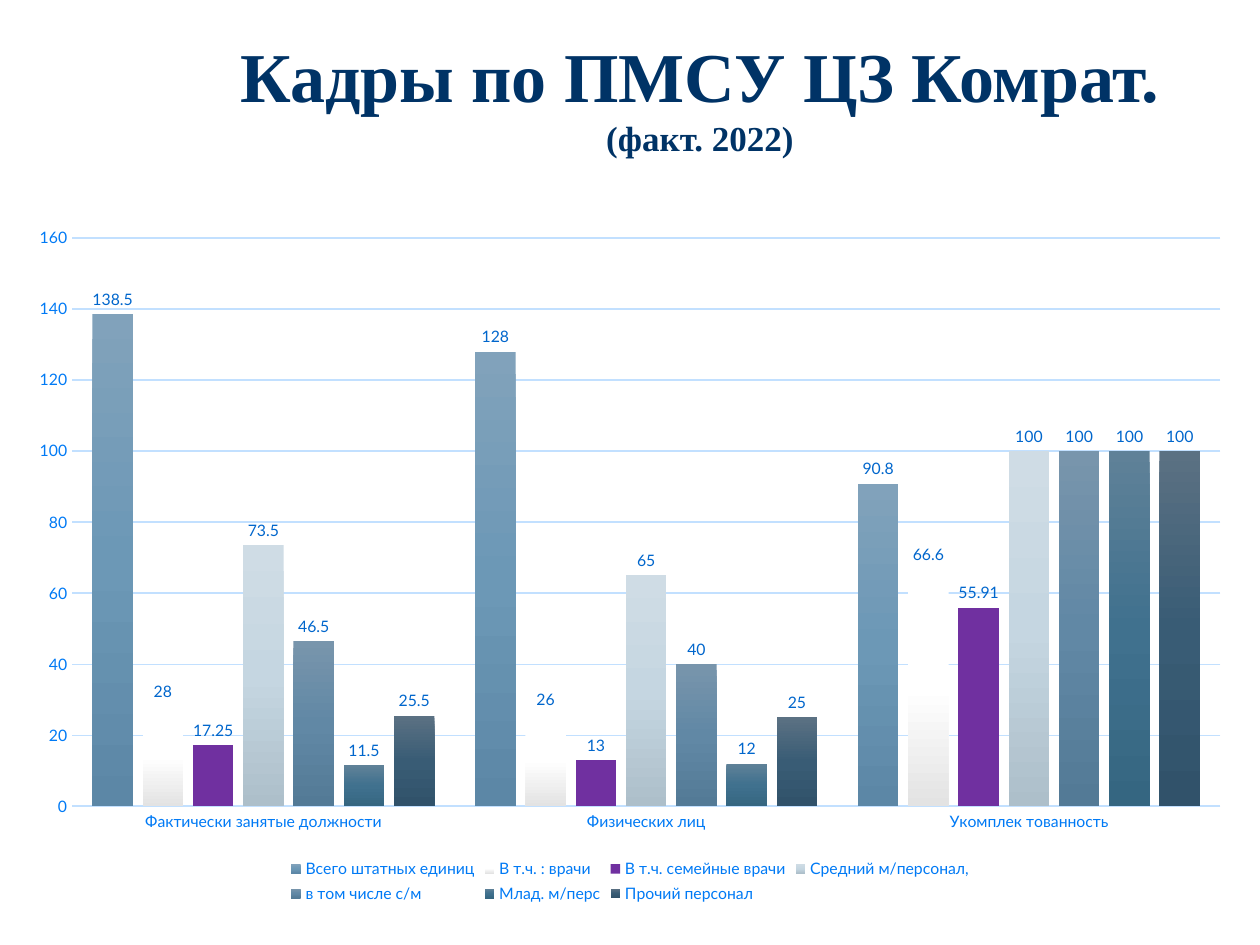
from copy import deepcopy
from dataclasses import dataclass

from pptx import Presentation
from pptx.chart.data import CategoryChartData
from pptx.dml.color import RGBColor
from pptx.enum.chart import (XL_CHART_TYPE, XL_LABEL_POSITION, XL_LEGEND_POSITION,
                             XL_TICK_MARK)
from pptx.enum.text import MSO_ANCHOR, PP_ALIGN
from pptx.oxml.ns import qn
from pptx.util import Inches, Pt

COLUMNS = XL_CHART_TYPE.COLUMN_CLUSTERED
OUTSIDE_END = XL_LABEL_POSITION.OUTSIDE_END
BOTTOM = XL_LEGEND_POSITION.BOTTOM
NO_TICK = XL_TICK_MARK.NONE
CENTER = PP_ALIGN.CENTER
MIDDLE = MSO_ANCHOR.MIDDLE


@dataclass(frozen=True)
class Theme:
    title_font: str = "Times New Roman"
    chart_font: str = "Lato"
    navy: str = "003366"
    axis: str = "007AF5"
    label: str = "0066CC"
    grid: str = "C2E0FF"
    title_size: int = 40
    subtitle_size: int = 20
    chart_size: int = 10
    small_size: int = 9


THEME = Theme()

CATEGORIES = ["Фактически занятые должности", "Физических лиц", "Укомплек тованность"]
# Name, values, and one solid colour or three gradient colours from top to bottom
STAFF = [
    ("Всего штатных единиц", (138.5, 128, 90.8), ("81A2BB", "6C98B6", "5C87A6")),
    ("В т.ч. : врачи", (28, 26, 66.6), ("FFFFFF", "FFFFFF", "E3E3E3")),
    ("В т.ч. семейные врачи", (17.25, 13, 55.91), ("7030A0",)),
    ("Средний м/персонал,", (73.5, 65, 100), ("CFDCE5", "C5D6E1", "ADBFCA")),
    ("в том числе с/м", (46.5, 40, 100), ("7895AC", "6188A5", "537A96")),
    ("Млад. м/перс", (11.5, 12, 100), ("5F8198", "40718E", "356681")),
    ("Прочий персонал", (25.5, 25, 100), ("5B7183", "395C75", "31526A")),
]


def style_font(font, *, size, color, name, bold=False):
    font.size = Pt(size)
    font.color.rgb = RGBColor.from_string(color)
    font.name = name
    font.bold = bold


def add_text(paragraph, text, **font_format):
    run = paragraph.add_run()
    run.text = text
    style_font(run.font, **font_format)


def style_line(line, color, width):
    line.color.rgb = RGBColor.from_string(color)
    line.width = Pt(width)


def fill_series(series, colors):
    """Fill with one solid colour, or with a three-stop gradient running downwards."""
    fill = series.format.fill
    if len(colors) == 1:
        fill.solid()
        fill.fore_color.rgb = RGBColor.from_string(colors[0])
        return
    fill.gradient()
    fill.gradient_angle = 270
    stop_list = next(series.format.element.iter(qn("a:gsLst"))) if hasattr(
        series.format, "element") else next(series._element.iter(qn("a:gsLst")))
    stop_list.insert(1, deepcopy(stop_list[0]))
    for stop, position, color in zip(fill.gradient_stops, (0, 0.5, 1), colors):
        stop.position = position
        stop.color.rgb = RGBColor.from_string(color)


def add_title(slide, box):
    frame = slide.shapes.add_textbox(*box).text_frame
    frame.word_wrap = True
    frame.vertical_anchor = MIDDLE
    paragraph = frame.paragraphs[0]
    paragraph.alignment = CENTER
    look = {"color": THEME.navy, "name": THEME.title_font, "bold": True}
    add_text(paragraph, "Кадры по ПМСУ ЦЗ Комрат.", size=THEME.title_size, **look)
    paragraph.add_line_break()
    add_text(paragraph, "(факт. 2022)", size=THEME.subtitle_size, **look)


def style_axes(chart, small):
    for axis in (chart.category_axis, chart.value_axis):
        axis.major_tick_mark = axis.minor_tick_mark = NO_TICK
        style_font(axis.tick_labels.font, color=THEME.axis, **small)
    chart.category_axis.has_major_gridlines = False
    style_line(chart.category_axis.format.line, THEME.grid, 1)
    value_axis = chart.value_axis
    value_axis.minimum_scale, value_axis.maximum_scale = 0, 160
    value_axis.major_unit = 20
    value_axis.format.line.fill.background()
    value_axis.has_major_gridlines = True
    style_line(value_axis.major_gridlines.format.line, THEME.grid, 0.75)


def add_staff_chart(slide, box):
    data = CategoryChartData()
    data.categories = CATEGORIES
    for name, values, _ in STAFF:
        data.add_series(name, values)
    chart = slide.shapes.add_chart(COLUMNS, *box, data).chart
    chart.has_title = False
    style_font(chart.font, size=THEME.chart_size, color=THEME.navy, name=THEME.chart_font)
    small = {"size": THEME.small_size, "name": THEME.chart_font}
    style_axes(chart, small)

    chart.has_legend = True
    chart.legend.position = BOTTOM
    chart.legend.include_in_layout = False
    style_font(chart.legend.font, color=THEME.axis, **small)

    plot = chart.plots[0]
    plot.gap_width, plot.overlap = 100, -24
    plot.vary_by_categories = False
    for series, (_, _, colors) in zip(plot.series, STAFF):
        series.invert_if_negative = False
        fill_series(series, colors)
        labels = series.data_labels
        labels.show_value = True
        labels.position = OUTSIDE_END
        style_font(labels.font, color=THEME.label, **small)


def main():
    presentation = Presentation()
    presentation.slide_width, presentation.slide_height = Inches(10), Inches(7.5)
    slide = presentation.slides.add_slide(presentation.slide_layouts[6])
    add_title(slide, (Inches(1.61), Inches(0.13), Inches(7.89), Inches(1.26)))
    add_staff_chart(slide, (Inches(0.12), Inches(1.7), Inches(9.76), Inches(5.51)))
    presentation.save("out.pptx")


if __name__ == "__main__":
    main()
